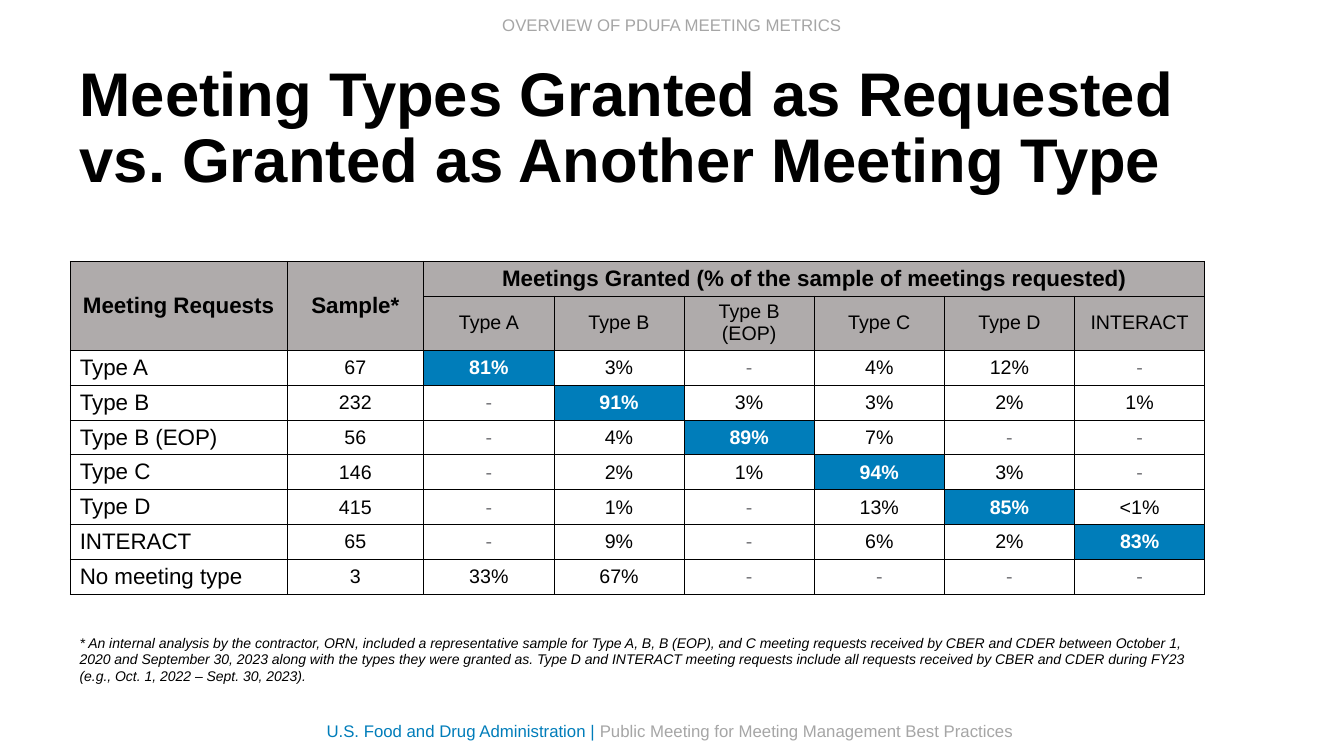
from dataclasses import dataclass

from lxml.etree import SubElement
from pptx import Presentation
from pptx.dml.color import RGBColor as Rgb
from pptx.enum.text import MSO_ANCHOR as Anchor, MSO_AUTO_SIZE as AutoSize, PP_ALIGN as Align
from pptx.oxml.ns import qn
from pptx.util import Cm, Pt


@dataclass(frozen=True)
class Theme:
    """Font, colours and type sizes of the slide."""
    font: str = "Arial"
    black: str = "000000"
    white: str = "FFFFFF"
    blue: str = "007DBA"
    header: str = "AFABAB"
    muted: str = "A6A6A6"
    dash: str = "77777B"
    title: int = 44
    label: int = 16
    value: int = 14
    running: int = 12
    note: int = 10


THEME = Theme()
TYPES = ["Type A", "Type B", "Type B (EOP)", "Type C", "Type D", "INTERACT"]
REQUESTS = [
    ("Type A", "67", "81%", "3%", "-", "4%", "12%", "-"),
    ("Type B", "232", "-", "91%", "3%", "3%", "2%", "1%"),
    ("Type B (EOP)", "56", "-", "4%", "89%", "7%", "-", "-"),
    ("Type C", "146", "-", "2%", "1%", "94%", "3%", "-"),
    ("Type D", "415", "-", "1%", "-", "13%", "85%", "<1%"),
    ("INTERACT", "65", "-", "9%", "-", "6%", "2%", "83%"),
    ("No meeting type", "3", "33%", "67%", "-", "-", "-", "-"),
]
COLUMN_WIDTHS = [5.46, 3.45] + [3.28] * len(TYPES)
ROW_HEIGHTS = [0.88, 1.36] + [0.88] * len(REQUESTS)
FOOTNOTE = (
    "* An internal analysis by the contractor, ORN, included a representative sample for "
    "Type A, B, B (EOP), and C meeting requests received by CBER and CDER between October 1, "
    "2020 and September 30, 2023 along with the types they were granted as. Type D and INTERACT "
    "meeting requests include all requests received by CBER and CDER during FY23 "
    "(e.g., Oct. 1, 2022 – Sept. 30, 2023)."
)


def add_run(paragraph, wording, size, color=THEME.black, bold=False, italic=False):
    """Add one formatted run to a paragraph."""
    run = paragraph.add_run()
    run.text = wording
    run.font.name = THEME.font
    run.font.size = Pt(size)
    run.font.bold = bold
    run.font.italic = italic
    run.font.color.rgb = Rgb.from_string(color)


def place(part, left, top, width, height):
    """Move and size a part, with lengths in centimetres."""
    part.left, part.top, part.width, part.height = map(Cm, (left, top, width, height))


def fill_title(title, wording):
    """Format the title placeholder."""
    place(title, 1.75, 1.42, 29.82, 3.68)
    frame = title.text_frame
    frame.auto_size = AutoSize.NONE
    frame.vertical_anchor = Anchor.MIDDLE
    heading = frame.paragraphs[0]
    heading.alignment = Align.LEFT
    heading.line_spacing = 0.9
    add_run(heading, wording, THEME.title, bold=True)


def fill_footnote(body, wording):
    """Format the body placeholder as an unbulleted footnote."""
    place(body, 1.75, 15.85, 28.6, 2.06)
    body.text_frame.auto_size = AutoSize.NONE
    note = body.text_frame.paragraphs[0]
    note.space_before = note.space_after = Pt(6)
    properties = note._p.get_or_add_pPr()
    properties.set("marL", "0")
    properties.set("indent", "0")
    SubElement(properties, qn("a:buNone"))
    add_run(note, wording, THEME.note, italic=True)


def add_running_line(slide, left, top, width, align, pieces):
    """Add a one-line text box made of coloured pieces."""
    line = slide.shapes.add_textbox(Cm(left), Cm(top), Cm(width), Cm(0.77))
    line.text_frame.word_wrap = True
    line.text_frame.auto_size = AutoSize.SHAPE_TO_FIT_TEXT
    paragraph = line.text_frame.paragraphs[0]
    paragraph.alignment = align
    for wording, color in pieces:
        add_run(paragraph, wording, THEME.running, color)


def style_cell(cell, fill):
    """Give a cell its borders, fill, margins and anchor."""
    properties = cell._tc.get_or_add_tcPr()
    for side in ("a:lnL", "a:lnR", "a:lnT", "a:lnB"):
        border = SubElement(properties, qn(side), w=str(Pt(0.5)))
        SubElement(SubElement(border, qn("a:solidFill")), qn("a:srgbClr"), val=THEME.black)
    cell.fill.solid()
    cell.fill.fore_color.rgb = Rgb.from_string(fill)
    cell.margin_left = cell.margin_right = Cm(0.24)
    cell.margin_top = cell.margin_bottom = Cm(0.1)
    cell.vertical_anchor = Anchor.MIDDLE


def write_cell(cell, wording, size, color=THEME.black, bold=False, align=Align.CENTER):
    """Write one run into a cell."""
    paragraph = cell.text_frame.paragraphs[0]
    paragraph.alignment = align
    add_run(paragraph, wording, size, color, bold)


def write_header(grid):
    """Merge and fill the two header rows."""
    grid.cell(0, 0).merge(grid.cell(1, 0))
    grid.cell(0, 1).merge(grid.cell(1, 1))
    grid.cell(0, 2).merge(grid.cell(0, len(COLUMN_WIDTHS) - 1))
    headings = ["Meeting Requests", "Sample*",
                "Meetings Granted (% of the sample of meetings requested)"]
    for column, heading in enumerate(headings):
        write_cell(grid.cell(0, column), heading, THEME.label, bold=True)
    for column, granted in enumerate(TYPES, 2):
        write_cell(grid.cell(1, column), granted, THEME.value)


def add_meetings_table(slide):
    """Add the table, with types granted as requested in blue."""
    grid = slide.shapes.add_table(
        len(ROW_HEIGHTS), len(COLUMN_WIDTHS), Cm(1.77), Cm(6.58),
        Cm(sum(COLUMN_WIDTHS)), Cm(sum(ROW_HEIGHTS))).table
    grid.first_row = grid.horz_banding = False
    for column, width in zip(grid.columns, COLUMN_WIDTHS):
        column.width = Cm(width)
    for row, height in zip(grid.rows, ROW_HEIGHTS):
        row.height = Cm(height)
    for row in range(len(ROW_HEIGHTS)):
        for column in range(len(COLUMN_WIDTHS)):
            as_requested = row == column >= 2
            fill = THEME.header if row < 2 else THEME.blue if as_requested else THEME.white
            style_cell(grid.cell(row, column), fill)
    write_header(grid)
    for row, (requested, *values) in enumerate(REQUESTS, 2):
        write_cell(grid.cell(row, 0), requested, THEME.label, align=Align.LEFT)
        for column, value in enumerate(values, 1):
            as_requested = row == column
            color = THEME.white if as_requested else THEME.dash if value == "-" else THEME.black
            write_cell(grid.cell(row, column), value, THEME.value, color, as_requested)


def main():
    """Build and save the slide."""
    deck = Presentation()
    deck.slide_width, deck.slide_height = Cm(33.87), Cm(19.05)
    slide = deck.slides.add_slide(deck.slide_layouts[1])
    add_meetings_table(slide)
    fill_footnote(slide.placeholders[1], FOOTNOTE)
    fill_title(slide.shapes.title,
               "Meeting Types Granted as Requested vs. Granted as Another Meeting Type")
    add_running_line(slide, 10.46, 0.25, 12.95, Align.CENTER,
                     [("OVERVIEW OF PDUFA MEETING METRICS", THEME.muted)])
    add_running_line(slide, 7.98, 18.03, 17.93, Align.LEFT,
                     [("U.S. Food and Drug Administration | ", THEME.blue),
                      ("Public Meeting for Meeting Management Best Practices", THEME.muted)])
    deck.save("out.pptx")


if __name__ == "__main__":
    main()
